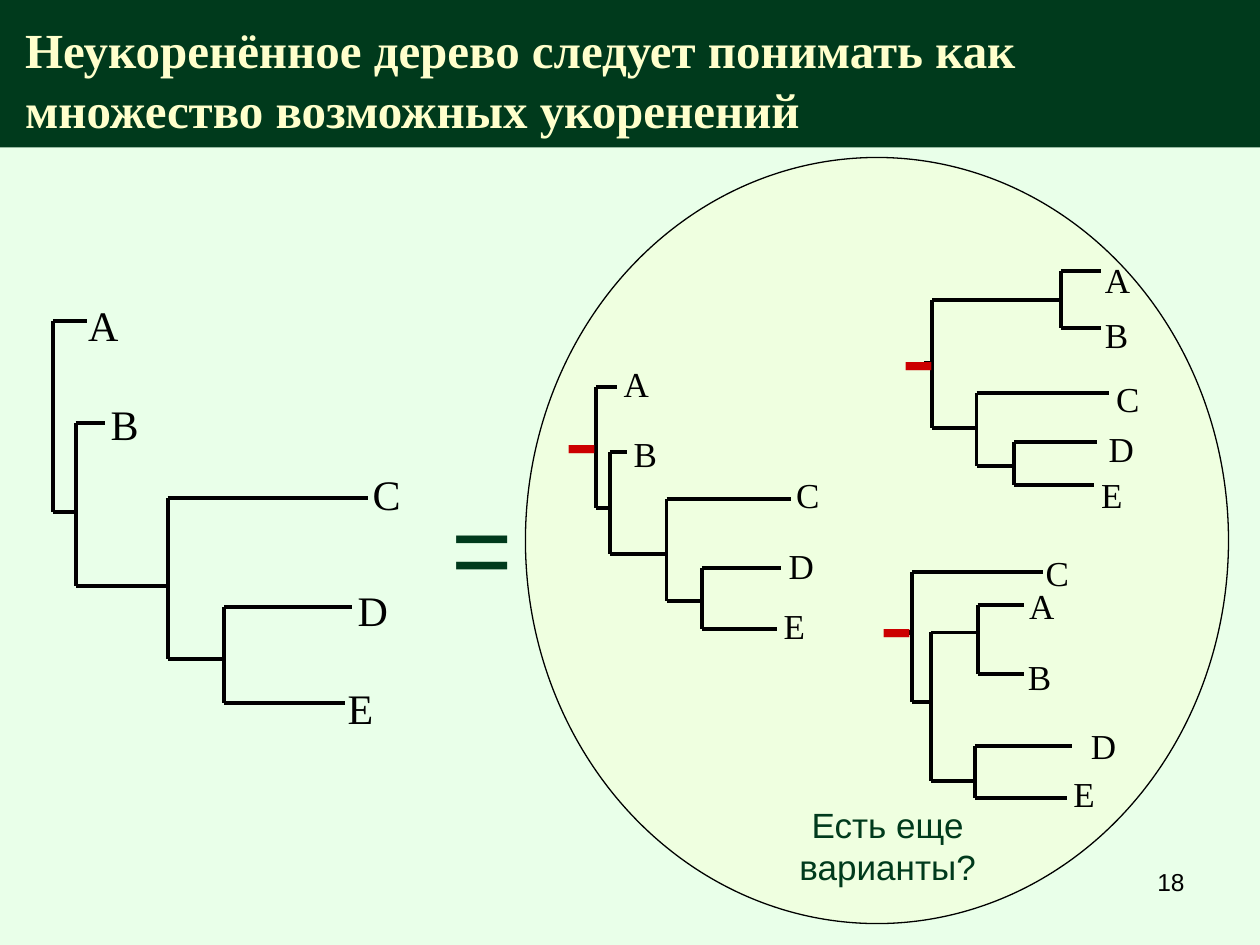
"""Build a slide showing an unrooted tree as the set of its possible rootings."""
from pptx import Presentation, util as u
from pptx.dml import color
from pptx.enum import shapes, text
from pptx.oxml import ns
from lxml import etree

COLORS = {"mint": "E9FFE9", "green": "003A1C", "cream": "FFFFCC", "black": "000000", "red": "CC0000"}
PALETTE = {name: color.RGBColor.from_string(code) for name, code in COLORS.items()}
SERIF, SANS = "Times New Roman", "Arial"
MIDDLE, TOP = text.MSO_ANCHOR.MIDDLE, text.MSO_ANCHOR.TOP
LEFT, CENTER, RIGHT = text.PP_ALIGN.LEFT, text.PP_ALIGN.CENTER, text.PP_ALIGN.RIGHT

deck = Presentation()
deck.slide_width, deck.slide_height = u.Inches(10), u.Inches(7.5)
COL, ROW = deck.slide_width / 100, deck.slide_height / 75
slide = deck.slides.add_slide(deck.slide_layouts[6])
slide.background.fill.solid()
slide.background.fill.fore_color.rgb = PALETTE["mint"]


def grid(left, top, width, height):
    return round(left * COL), round(top * ROW), round(width * COL), round(height * ROW)


def write(holder, lines, size, ink="black", face=SERIF, align=LEFT, anchor=TOP, wrap=False, bold=False):
    frame = holder.text_frame
    frame.text = lines
    frame.word_wrap, frame.vertical_anchor = wrap, anchor
    for paragraph in frame.paragraphs:
        paragraph.alignment = align
        paragraph.font.color.rgb = PALETTE[ink]
        for key, value in {"size": u.Pt(size), "name": face, "bold": bold}.items():
            setattr(paragraph.font, key, value)
    return frame


rootings = slide.shapes.add_shape(shapes.MSO_SHAPE.OVAL, *grid(41.7, 12.5, 55.8, 60.8))
header = slide.shapes.add_shape(shapes.MSO_SHAPE.RECTANGLE, *grid(0, 0, 100, 11.7))
for area, paint in ((rootings, "cream"), (header, "green")):
    area.shadow.inherit = False
    area.fill.solid()
    area.fill.fore_color.rgb = PALETTE[paint]
tint = rootings.fill.fore_color._xFill.find(ns.qn("a:srgbClr"))
etree.SubElement(tint, ns.qn("a:alpha")).set("val", "31000")
rootings.line.color.rgb = PALETTE["black"]
rootings.line.width = u.Pt(0.75)
header.line.fill.background()
heading = write(header, "Неукоренённое дерево следует понимать как\nмножество возможных укоренений",
                28, "cream", anchor=MIDDLE, wrap=True, bold=True)
for side, inset in {"left": 0.2, "right": 0.1, "top": 0.08, "bottom": 0}.items():
    setattr(heading, f"margin_{side}", u.Inches(inset))
for paragraph in heading.paragraphs:
    paragraph.line_spacing = u.Pt(34)

trees = [
    {"size": 24, "label": (4.2, 5), "root": None,
     "forks": [(4.2, 25.5, 40.6), (6, 33.6, 40.6, 46.5), (13.3, 39.5, 46.5, 52.3), (17.8, 48.2, 52.3, 55.8)],
     "branches": [(25.5, 4.2, 6.9), (40.6, 4.2, 6), (33.6, 6, 8.3), (46.5, 6, 13.3), (39.5, 13.3, 29.2),
                  (52.3, 13.3, 17.8), (48.2, 17.8, 27.9), (55.8, 17.8, 27.4)],
     "leaves": {"A": (6, 23.3), "B": (7.8, 31.1), "C": (28.6, 36.7), "D": (27.4, 45.9), "E": (26.6, 53.7)}},
    {"size": 20, "label": (3.9, 4.3), "root": (35.5, 47.3, 46.7),
     "forks": [(47.3, 30.7, 40.3), (48.4, 35.9, 40.3, 44), (52.9, 39.6, 44, 47.7), (55.7, 45.1, 47.7, 49.9)],
     "branches": [(30.7, 47.3, 49), (40.3, 47.3, 48.4), (35.9, 48.4, 49.8), (44, 48.4, 52.9), (39.6, 52.9, 62.8),
                  (47.7, 52.9, 55.7), (45.1, 55.7, 62), (49.9, 55.7, 61.7)],
     "leaves": {"A": (48.5, 28.3), "B": (49.3, 33.8), "C": (62.2, 37.1), "D": (61.6, 42.7), "E": (61.2, 47.5)}},
    {"size": 20, "label": (3.9, 4.3), "root": (28.9, 74, 73.3),
     "forks": [(74, 23.8, 34), (77.5, 31.2, 34.4, 37), (80.5, 35.1, 37, 38.5), (84.2, 21.5, 26)],
     "branches": [(34, 74, 77.6), (31.2, 77.5, 88), (37, 77.5, 80.5), (35.1, 80.5, 87.1), (38.5, 80.5, 86.8),
                  (23.8, 74, 84.2), (21.5, 84.2, 87.4), (26, 84.2, 87.4)],
     "leaves": {"A": (86.7, 20), "B": (86.7, 24.4), "C": (87.6, 29.5), "D": (87, 33.4), "E": (86.4, 37.1)}},
    {"size": 20, "label": (3.9, 4.3), "root": (50.2, 72.4, 71.7),
     "forks": [(72.4, 45.4, 55.7), (73.9, 50.2, 62), (77.4, 59.2, 61.4, 63.3), (77.6, 48, 53.5)],
     "branches": [(45.4, 72.4, 82.8), (55.7, 72.4, 73.9), (50.2, 73.9, 77.6), (62, 73.9, 77.4), (59.2, 77.4, 85.1),
                  (63.3, 77.4, 84.7), (48, 77.6, 81.3), (53.5, 77.6, 81.3)],
     "leaves": {"A": (80.7, 45.9), "B": (80.6, 51.5), "C": (82, 43.3), "D": (85.6, 57), "E": (84.2, 60.8)}},
]

for tree in trees:
    parts = slide.shapes.add_group_shape().shapes
    strokes = [(x, start, x, end, 2.25) for x, *stops in tree["forks"] for start, end in zip(stops, stops[1:])]
    strokes += [(start, y, end, y, 2.25) for y, start, end in tree["branches"]]
    if tree["root"]:
        y, start, end = tree["root"]
        strokes.append((start, y, end, y, 3))
    for *ends, weight in strokes:
        edge = parts.add_connector(shapes.MSO_CONNECTOR.STRAIGHT, *grid(*ends))
        edge.line.color.rgb = PALETTE["black"]
        edge.line.width = u.Pt(weight)
        etree.SubElement(edge._element.spPr, ns.qn("a:effectLst"))
    for leaf, corner in tree["leaves"].items():
        write(parts.add_textbox(*grid(*corner, *tree["label"])), leaf, tree["size"])

for words, place, size, ink in (
    ("=", (33.3, 40.8, 10, 5), 60, "green"),
    ("-", (43.3, 33.3, 5.8, 2.5), 60, "red"),
    ("-", (68.3, 47.5, 5.8, 3.3), 60, "red"),
    ("-", (70, 26.7, 5.8, 2.5), 60, "red"),
    ("Есть еще варианты?", (56.7, 64.2, 27.5, 5.8), 20, "green"),
):
    write(slide.shapes.add_textbox(*grid(*place)), words, size, ink, SANS, CENTER, MIDDLE)
write(slide.shapes.add_textbox(*grid(71.7, 68.3, 23.3, 5.2)), "18", 14, face=SANS, align=RIGHT, wrap=True)

deck.save("out.pptx")
